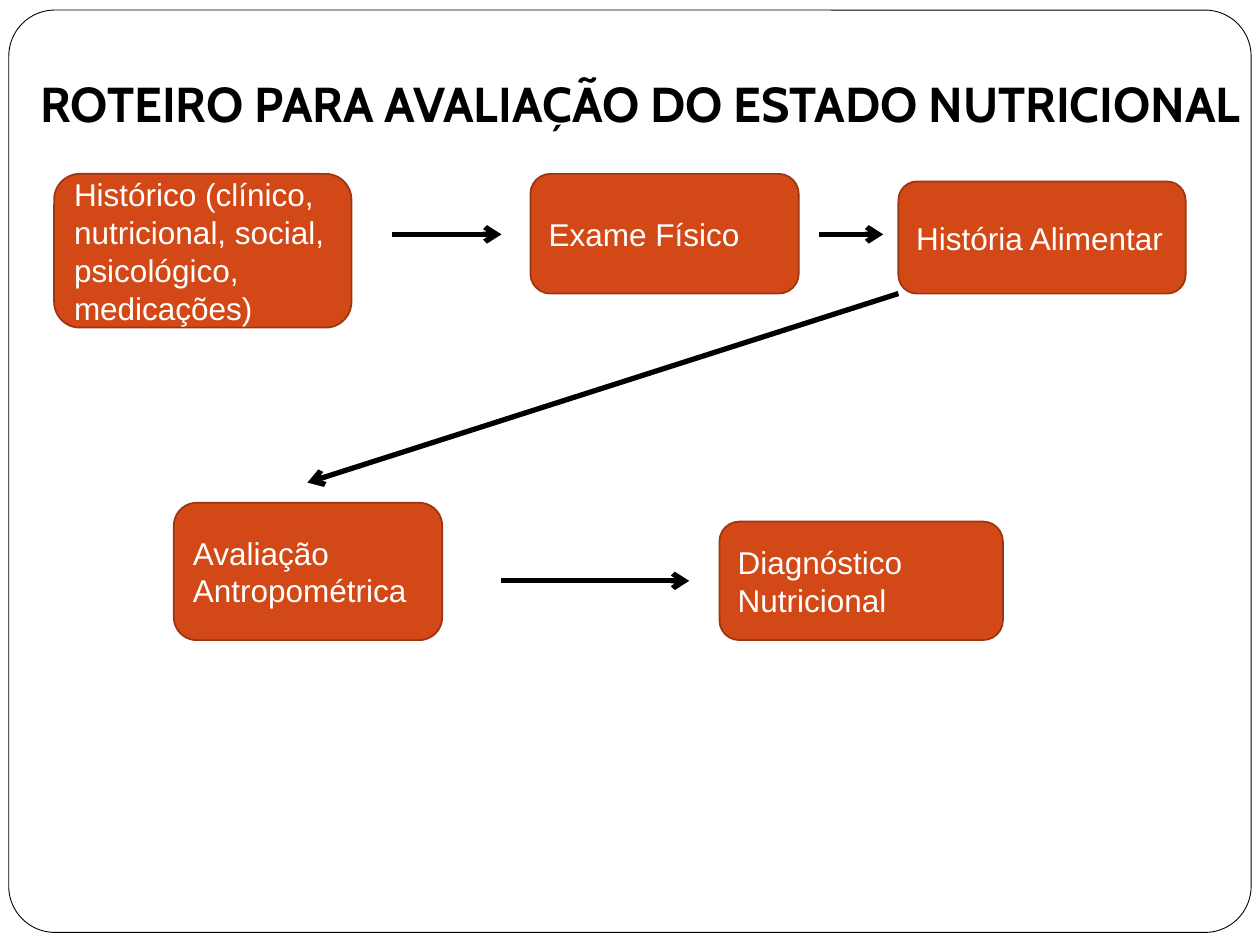
from typing import NamedTuple

from lxml.etree import SubElement
from pptx import Presentation
from pptx.dml.color import RGBColor
from pptx.enum.shapes import MSO_CONNECTOR as CONNECTOR, MSO_SHAPE as SHAPE
from pptx.enum.text import MSO_ANCHOR as ANCHOR, PP_ALIGN as ALIGN
from pptx.oxml.ns import qn
from pptx.util import Inches, Pt

WHITE = RGBColor(0xFF, 0xFF, 0xFF)
BLACK = RGBColor(0x00, 0x00, 0x00)
ORANGE = RGBColor(0xD3, 0x48, 0x17)
RUST = RGBColor(0x9C, 0x35, 0x11)

COLUMNS, ROWS = 100, 75
CELL = Inches(0.1)


class Box(NamedTuple):
    """An area of the slide, in grid columns and rows."""
    left: float
    top: float
    width: float
    height: float

    def inner(self, left, top, width, height):
        return Box(self.left + left, self.top + top, width, height)

    def point(self, column, row):
        return round((self.left + column) * CELL), round((self.top + row) * CELL)

    def lengths(self):
        return [round(value * CELL) for value in self]


# Each step: text lines and its place within the flow area
STEPS = [
    (["Histórico (clínico,", "nutricional, social, psicológico,", "medicações)"],
     (0, 0, 23.6, 12.2)),
    (["Exame Físico"], (37.8, 0, 21.3, 9.5)),
    (["História Alimentar"], (67, 0.6, 22.8, 8.9)),
    (["Avaliação Antropométrica"], (9.5, 26.1, 21.3, 10.9)),
    (["Diagnóstico Nutricional"], (52.8, 27.6, 22.5, 9.4)),
]
# Each arrow: start and end within the flow area
ARROWS = [
    ((67, 9.5), (20.1, 24.5)),
    ((35.5, 32.3), (50.4, 32.3)),
    ((26.8, 4.8), (35.5, 4.8)),
    ((60.7, 4.8), (65.8, 4.8)),
]


def write(frame, lines, *, font="Arial", size=18, color=WHITE, bold=False,
          align=ALIGN.LEFT, anchor=ANCHOR.MIDDLE):
    frame.word_wrap = True
    frame.vertical_anchor = anchor
    for index, line in enumerate(lines):
        para = frame.paragraphs[0] if index == 0 else frame.add_paragraph()
        para.alignment = align
        span = para.add_run()
        span.text = line
        span.font.name = font
        span.font.size = Pt(size)
        span.font.bold = bold
        span.font.color.rgb = color


def add_rounded(page, box, fill, line, width):
    shape = page.shapes.add_shape(SHAPE.ROUNDED_RECTANGLE, *box.lengths())
    shape.shadow.inherit = False
    shape.fill.solid()
    shape.fill.fore_color.rgb = fill
    shape.line.color.rgb = line
    shape.line.width = Pt(width)
    return shape


def add_arrow(page, start, end):
    arrow = page.shapes.add_connector(CONNECTOR.STRAIGHT, *start, *end)
    arrow.line.color.rgb = BLACK
    arrow.line.width = Pt(3)
    properties = arrow._element.spPr
    SubElement(properties.find(qn("a:ln")), qn("a:tailEnd"), type="arrow")
    SubElement(properties, qn("a:effectLst"))


def add_border(page, box):
    border = add_rounded(page, box, WHITE, BLACK, 0.5)
    border.adjustments[0] = 0.05


def add_title(page, box):
    frame = page.shapes.add_textbox(*box.lengths()).text_frame
    frame.margin_bottom = Inches(0.1)
    write(frame, ["ROTEIRO PARA AVALIAÇÃO DO ESTADO NUTRICIONAL"], font="Cabin",
          size=28, color=BLACK, bold=True, align=ALIGN.CENTER, anchor=ANCHOR.BOTTOM)


def add_flow(page, box):
    """Draw the assessment steps and the arrows that link them."""
    for lines, place in STEPS:
        step = add_rounded(page, box.inner(*place), ORANGE, RUST, 1)
        write(step.text_frame, lines)
    for start, end in ARROWS:
        add_arrow(page, box.point(*start), box.point(*end))


def main():
    deck = Presentation()
    deck.slide_width = COLUMNS * CELL
    deck.slide_height = ROWS * CELL
    page = deck.slides.add_slide(deck.slide_layouts[6])
    whole = Box(0, 0, COLUMNS, ROWS)
    add_border(page, whole.inner(0.7, 0.8, 98.6, 73.2))
    add_title(page, whole.inner(2, 1.3, 97.6, 10.2))
    add_flow(page, whole.inner(4.3, 13.8, 89.8, 37))
    deck.save("out.pptx")


if __name__ == "__main__":
    main()
